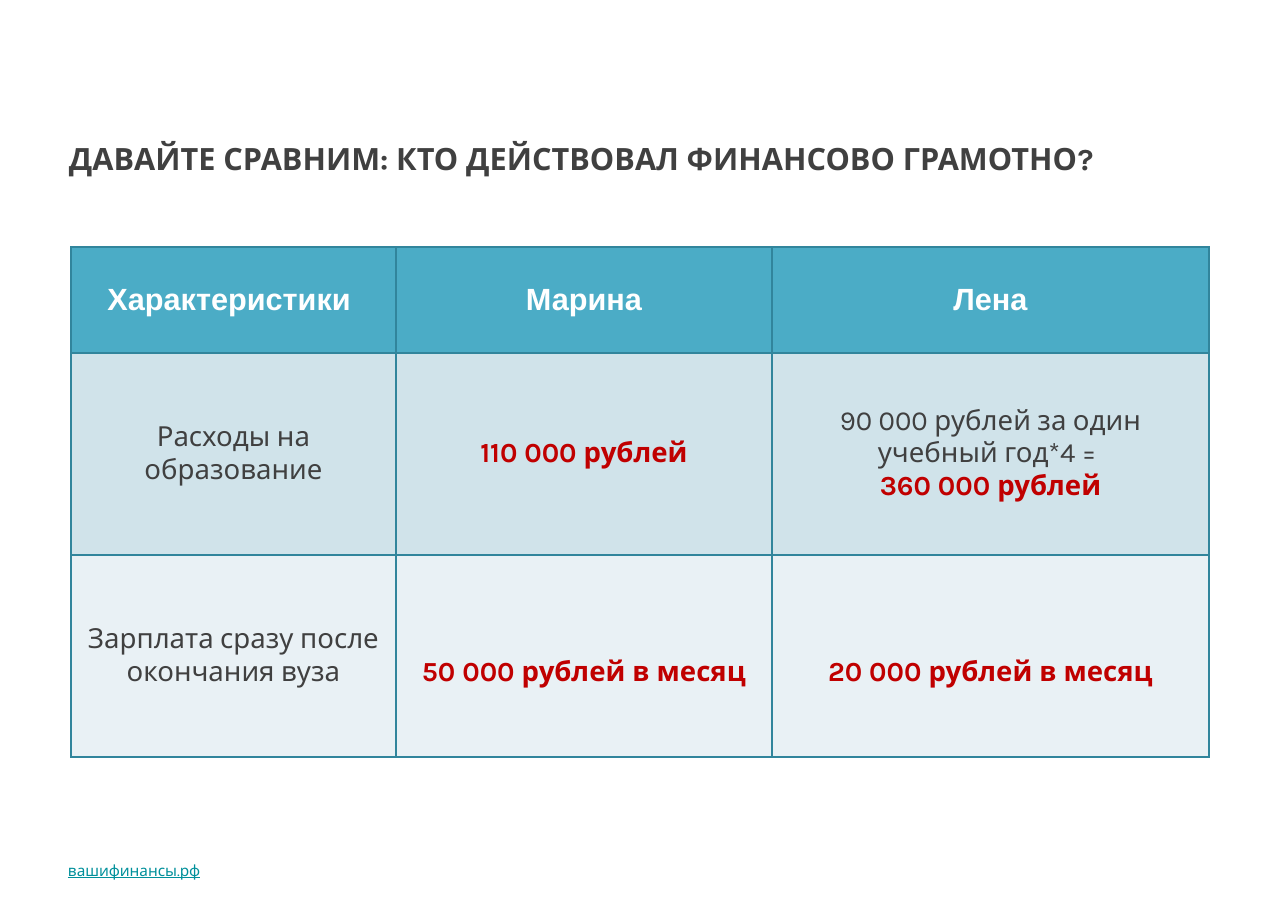
"""Build a slide comparing how Marina and Lena paid for their education."""
from dataclasses import dataclass

from lxml.etree import SubElement
from pptx import Presentation
from pptx.dml.color import RGBColor
from pptx.enum.text import MSO_ANCHOR, PP_ALIGN
from pptx.oxml.ns import qn
from pptx.util import Emu, Pt


@dataclass(frozen=True)
class Theme:
    head_font: str = "Arial"
    body_font: str = "Karla"
    ink: str = "404040"
    accent: str = "C00000"
    white: str = "FFFFFF"
    link: str = "00909B"
    border: str = "31859C"
    row_fills: tuple = ("4BACC6", "D0E3EA", "E9F1F5")
    title_size: int = 20
    body_size: int = 18
    link_size: int = 10

    def text(self, **changes):
        return {"name": self.body_font, "size": self.body_size,
                "color": self.ink, "bold": False, **changes}


class SlideBuilder:
    SCALE = 8290

    def __init__(self, theme, width, height):
        self.theme = theme
        self.deck = Presentation()
        self.deck.slide_width = self.px(width)
        self.deck.slide_height = self.px(height)
        self.page = self.deck.slides.add_slide(self.deck.slide_layouts[6])

    def px(self, length):
        return Emu(length * self.SCALE)

    def apply(self, target, values):
        for name, value in values.items():
            setattr(target, name, value)

    def add_span(self, para, text, style):
        span = para.add_run()
        span.text = text
        values = {**style, "size": Pt(style["size"])}
        span.font.color.rgb = RGBColor.from_string(values.pop("color"))
        self.apply(span.font, values)

    def label(self, bounds, text, style, anchor):
        box = self.page.shapes.add_textbox(*map(self.px, bounds))
        frame = box.text_frame
        inset = self.px(5)
        self.apply(frame, {"word_wrap": True, "vertical_anchor": anchor,
                           "margin_left": inset, "margin_right": inset,
                           "margin_top": inset, "margin_bottom": inset})
        self.add_span(frame.paragraphs[0], text, style)

    def outline(self, cell):
        properties = cell._tc.get_or_add_tcPr()
        for side in ("a:lnL", "a:lnR", "a:lnT", "a:lnB"):
            line = SubElement(properties, qn(side), w=str(Pt(1)))
            fill = SubElement(line, qn("a:solidFill"))
            SubElement(fill, qn("a:srgbClr"), val=self.theme.border)

    def fill_cell(self, cell, lines, color, top):
        self.outline(cell)
        cell.fill.solid()
        cell.fill.fore_color.rgb = RGBColor.from_string(color)
        self.apply(cell, {"vertical_anchor": MSO_ANCHOR.MIDDLE,
                          "margin_top": self.px(top)})
        for index, (text, style) in enumerate(lines):
            frame = cell.text_frame
            para = frame.add_paragraph() if index else frame.paragraphs[0]
            para.alignment = PP_ALIGN.CENTER
            self.add_span(para, text, style)

    def table(self, left, top, widths, heights, rows, lowered):
        bounds = (left, top, sum(widths), sum(heights))
        grid = self.page.shapes.add_table(
            len(rows), len(widths), *map(self.px, bounds)).table
        self.apply(grid, {"first_row": False, "horz_banding": False})
        for column, width in zip(grid.columns, widths):
            column.width = self.px(width)
        for r, (height, cells) in enumerate(zip(heights, rows)):
            grid.rows[r].height = self.px(height)
            for c, lines in enumerate(cells):
                inset = 38 if (r, c) in lowered else 5
                self.fill_cell(grid.cell(r, c), lines, self.theme.row_fills[r], inset)


def main():
    theme = Theme()
    slide = SlideBuilder(theme, 1288, 911)
    title = theme.text(size=theme.title_size, bold=True)
    head = {**title, "name": theme.head_font, "color": theme.white}
    body = theme.text()
    amount = theme.text(color=theme.accent, bold=True)
    link = theme.text(size=theme.link_size, color=theme.link, underline=True)

    slide.label((63, 855, 438, 31), "вашифинансы.рф", link, MSO_ANCHOR.MIDDLE)
    slide.label((64, 135, 1160, 106),
                "ДАВАЙТЕ СРАВНИМ: КТО ДЕЙСТВОВАЛ ФИНАНСОВО ГРАМОТНО?",
                title, MSO_ANCHOR.TOP)
    rows = [
        [[(name, head)] for name in ("Характеристики ", "Марина", "Лена")],
        [[("Расходы на образование", body)],
         [("110 000 рублей", amount)],
         [("90 000 рублей за один учебный год*4 = ", body),
          ("360 000 рублей", amount)]],
        [[("Зарплата сразу после окончания вуза", body)],
         [("50 000 рублей в месяц", amount)],
         [("20 000 рублей в месяц", amount)]],
    ]
    slide.table(71, 247, (325, 376, 437), (106, 202, 202), rows,
                lowered={(2, 1), (2, 2)})
    slide.deck.save("out.pptx")


if __name__ == "__main__":
    main()
